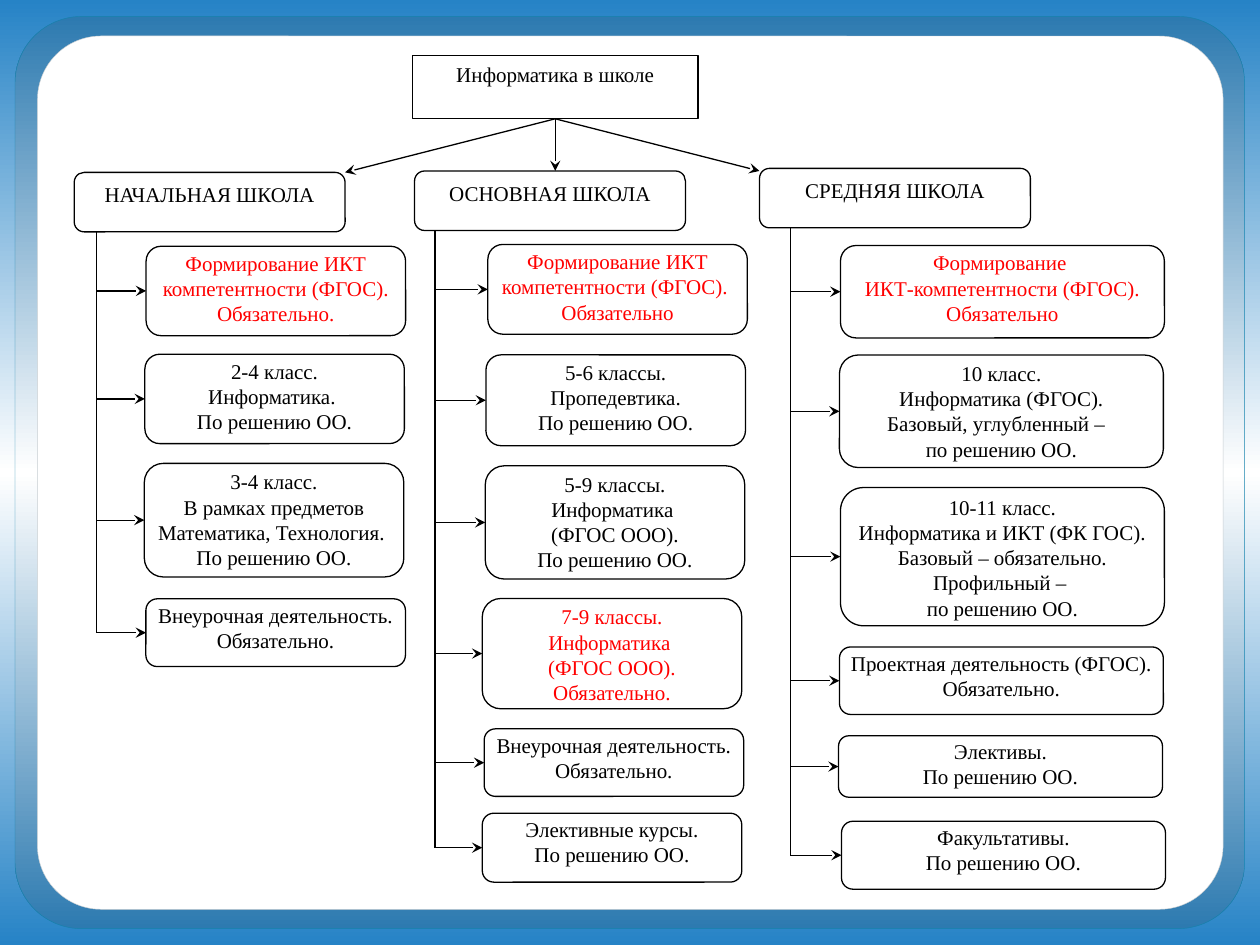
from copy import deepcopy

from lxml import etree
from pptx import Presentation
from pptx.dml.color import RGBColor
from pptx.enum import shapes, text
from pptx.oxml.ns import qn
from pptx.util import Pt

COLORS = {"black": "000000", "red": "FF0000", "white": "FFFFFF", "blue": "2683C6",
          "frame": "2D7AB0", "frame_line": "1482AC", "panel_line": "C6CDD1"}
FONT, SIZE, LINE_W = "Times New Roman", 12, 0.75
HEAD_W, HEAD_H = 154.8, 34
ROOT = ("Информатика в школе", (235.6, 31.6, 163.4, 36.3))

# Each box: left, top, height, colour, paragraphs
COLUMNS = [
    {"title": "НАЧАЛЬНАЯ ШКОЛА", "head": (42.4, 98.5), "trunk": 55.2, "width": 148.3, "boxes": [
        (83.5, 140.7, 51.1, "red", ["Формирование ИКТ компетентности (ФГОС).", "Обязательно."]),
        (82.8, 202.4, 51.1, "black", ["2-4 класс.", "Информатика. ", "По решению ОО."]),
        (82.5, 264.8, 64.9, "black", ["3-4 класс.", "В рамках предметов Математика, Технология. ",
                                      "По решению ОО."]),
        (83.4, 342.2, 38.7, "black", ["Внеурочная деятельность.", "Обязательно."]),
    ]},
    {"title": "ОСНОВНАЯ ШКОЛА", "head": (236.9, 97.7), "trunk": 248.6, "width": 148.3, "boxes": [
        (278.8, 139.7, 51.3, "red", ["Формирование ИКТ компетентности (ФГОС). ", "Обязательно"]),
        (277.7, 202.8, 51.9, "black", ["5-6 классы.", "Пропедевтика.", "По решению ОО."]),
        (277.3, 266.2, 64.7, "black", ["5-9 классы.", "Информатика \n(ФГОС ООО).", "По решению ОО."]),
        (275.6, 342, 63, "red", ["7-9 классы.", "Информатика \n(ФГОС ООО).", "Обязательно."]),
        (276.7, 416.5, 38.6, "black", ["Внеурочная деятельность.", "Обязательно."]),
        (275.6, 464.7, 39.4, "black", ["Элективные курсы.", "По решению ОО."]),
    ]},
    {"title": "СРЕДНЯЯ ШКОЛА", "head": (434, 96.2), "trunk": 451.7, "width": 185.1, "boxes": [
        (480.3, 140.3, 52.8, "red", ["Формирование \nИКТ-компетентности (ФГОС).", "Обязательно"]),
        (479.7, 202.9, 64.3, "black", ["10 класс.", "Информатика (ФГОС).",
                                       "Базовый, углубленный –  \nпо решению ОО."]),
        (480.3, 278.6, 79, "black", ["10-11 класс.", "Информатика и ИКТ (ФК ГОС).",
                                     "Базовый – обязательно.", "Профильный – \nпо решению ОО."]),
        (479.7, 369.7, 38.6, "black", ["Проектная деятельность (ФГОС).", "Обязательно."]),
        (479.2, 420.5, 35.1, "black", ["Элективы.", "По решению ОО."]),
        (480.9, 469.3, 38.8, "black", ["Факультативы.", "По решению ОО."]),
    ]},
]

prs = Presentation()
prs.slide_width, prs.slide_height = Pt(720), Pt(540)
s = prs.slides.add_slide(prs.slide_layouts[6])


def rgb(name):
    return RGBColor.from_string(COLORS[name])


def mirror_gradient(fill, element, edge):
    """Vertical gradient: edge colour, white in the middle, edge colour."""
    fill.gradient()
    fill.gradient_angle = 90
    stops = next(element.iter(qn("a:gsLst")))
    middle = deepcopy(stops[0])
    stops.insert(1, middle)
    for stop, name, pos in zip(fill.gradient_stops, (edge, "white", edge), (0, 0.5, 1)):
        stop.color.rgb = rgb(name)
        stop.position = pos


def add_box(bounds, line="black", width=LINE_W, radius=0.167):
    kind = shapes.MSO_SHAPE.ROUNDED_RECTANGLE if radius else shapes.MSO_SHAPE.RECTANGLE
    sp = s.shapes.add_shape(kind, *map(Pt, bounds))
    if radius:
        sp.adjustments[0] = radius
    sp.shadow.inherit = False
    sp.fill.solid()
    sp.fill.fore_color.rgb = rgb("white")
    sp.line.color.rgb = rgb(line)
    sp.line.width = Pt(width)
    return sp


def write(sp, paragraphs, color="black", inset=None, after=None):
    tf = sp.text_frame
    tf.word_wrap = True
    tf.vertical_anchor = text.MSO_ANCHOR.TOP
    if inset is not None:
        tf.margin_left = tf.margin_top = tf.margin_right = tf.margin_bottom = Pt(inset)
    for i, content in enumerate(paragraphs):
        p = tf.add_paragraph() if i else tf.paragraphs[0]
        p.alignment = text.PP_ALIGN.CENTER
        if after:
            p.space_after = Pt(after)
        for j, line in enumerate(content.split("\n")):
            if j:
                p.add_line_break()
            r = p.add_run()
            r.text = line
            r.font.name, r.font.size = FONT, Pt(SIZE)
            r.font.color.rgb = rgb(color)
        # Line breaks take the size of the text around them
        for br in p._p.findall(qn("a:br")):
            br.append(deepcopy(r.font._element))


def add_line(start, end, arrow=True):
    c = s.shapes.add_connector(shapes.MSO_CONNECTOR.STRAIGHT, *map(Pt, start + end))
    c.line.color.rgb = rgb("black")
    c.line.width = Pt(LINE_W)
    if arrow:
        etree.SubElement(c.line._get_or_add_ln(), qn("a:tailEnd"), type="stealth")
    etree.SubElement(c._element.spPr, qn("a:effectLst"))
    return c


# Background, frame and white panel
mirror_gradient(s.background.fill, s._element, "blue")
frame = add_box((8.6, 9.4, 702.7, 521.3), "frame_line", 0.25, 0.073)
mirror_gradient(frame.fill, frame._element, "frame")
add_box((21.4, 20.6, 677.5, 499), "panel_line", 0.25, 0.073)

# Root of the tree
root_text, root_at = ROOT
root = add_box(root_at, radius=0)
write(root, [root_text])
root_foot = (root_at[0] + root_at[2] / 2, root_at[1] + root_at[3])

for n, col in enumerate(COLUMNS):
    # School level, with its arrow from the root
    left, top = col["head"]
    head = add_box((left, top, HEAD_W, HEAD_H))
    write(head, [col["title"]], after=10)
    head_x = (left + HEAD_W, root_foot[0], left)[n]
    add_line(root_foot, (head_x, top + (0, 0, 1.5)[n])).begin_connect(root, 2)

    # Boxes, each with an arrow from the trunk to its left side
    for x, y, h, color, paragraphs in col["boxes"]:
        box = add_box((x, y, col["width"], h))
        write(box, paragraphs, color, inset=0)
        mid = y + h / 2
        add_line((col["trunk"], mid), (x, mid)).end_connect(box, 1)

    # Trunk runs from the level down to the last arrow
    add_line((col["trunk"], top + HEAD_H), (col["trunk"], mid), arrow=False)

prs.save("out.pptx")
